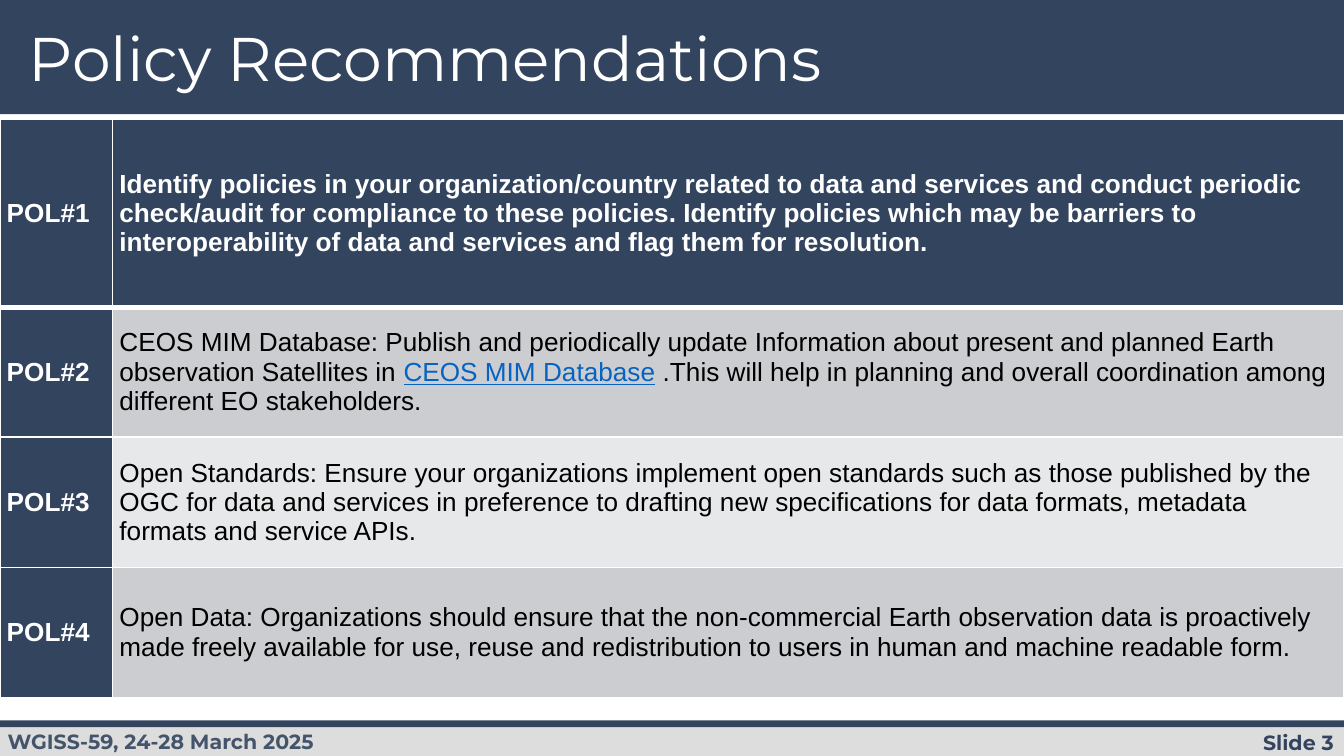
from dataclasses import dataclass
from typing import Any, NamedTuple

from lxml import etree
from pptx import Presentation
from pptx.dml.color import RGBColor
from pptx.enum.shapes import MSO_SHAPE
from pptx.enum.text import MSO_ANCHOR, PP_ALIGN
from pptx.oxml.ns import qn
from pptx.util import Pt

RECTANGLE = MSO_SHAPE.RECTANGLE
TOP, MIDDLE = MSO_ANCHOR.TOP, MSO_ANCHOR.MIDDLE
LEFT, RIGHT = PP_ALIGN.LEFT, PP_ALIGN.RIGHT
TITLE_ONLY = 5


@dataclass(frozen=True)
class Theme:
    navy: str = "33445F"
    slate: str = "44546A"
    footer: str = "DDDDDD"
    band_dark: str = "CCCDD1"
    band_light: str = "E7E8E9"
    white: str = "FFFFFF"
    black: str = "000000"
    link: str = "0563C1"
    heading_font: str = "Montserrat"
    table_font: str = "Arial"
    title_size: float = 33
    table_size: float = 14
    footer_size: float = 11


THEME = Theme()


class Box(NamedTuple):
    left: float
    top: float
    width: float
    height: float

    def in_points(self) -> list[int]:
        return [Pt(length) for length in self]


class Bar(NamedTuple):
    box: Box
    color: str


class FooterText(NamedTuple):
    box: Box
    text: str
    color: str
    align: Any
    margins: tuple[float, float]


class Phrase(NamedTuple):
    text: str
    linked: bool = False


class Policy(NamedTuple):
    label: str
    phrases: list[Phrase]
    height: float
    fill: str
    header: bool = False


BARS = [
    Bar(Box(0, 0, 720, 61.2), THEME.navy),
    Bar(Box(0, 388.2, 720, 16.8), THEME.footer),
    Bar(Box(0, 386, 720, 3.6), THEME.navy),
]
FOOTER_TEXTS = [
    FooterText(Box(606, 388.2, 114, 18.5), "Slide 3", THEME.navy, RIGHT, (5.4, 2.7)),
    FooterText(Box(-3, 383.8, 227.5, 28), "WGISS-59, 24-28 March 2025", THEME.slate, LEFT, (7.2, 7.2)),
]
TITLE_BOX = Box(10, 10, 554.4, 46)
COLUMN_WIDTHS = [60.4, 659.6]
TABLE_TOP = 64
POLICIES = [
    Policy("POL#1", [Phrase(
        "Identify policies in your organization/country related to data and services and conduct "
        "periodic check/audit for compliance to these policies. Identify policies which may be "
        "barriers to interoperability of data and services and flag them for resolution."
    )], 100.6, THEME.navy, header=True),
    Policy("POL#2", [
        Phrase("CEOS MIM Database: Publish and periodically update Information about present and "
               "planned Earth observation Satellites in "),
        Phrase("CEOS MIM Database", linked=True),
        Phrase(" .This will help in planning and overall coordination among different EO stakeholders."),
    ], 69.7, THEME.band_dark),
    Policy("POL#3", [Phrase(
        "Open Standards: Ensure your organizations implement open standards such as those published "
        "by the OGC for data and services in preference to drafting new specifications for data "
        "formats, metadata formats and service APIs."
    )], 69.7, THEME.band_light),
    Policy("POL#4", [Phrase(
        "Open Data: Organizations should ensure that the non-commercial Earth observation data is "
        "proactively made freely available for use, reuse and redistribution to users in human and "
        "machine readable form."
    )], 69.7, THEME.band_dark),
]


def apply_format(target: Any, values: dict[str, Any]) -> None:
    for name, value in values.items():
        setattr(target, name, value)


def margins(horizontal: float, vertical: float) -> dict[str, int]:
    return {
        "margin_left": Pt(horizontal), "margin_right": Pt(horizontal),
        "margin_top": Pt(vertical), "margin_bottom": Pt(vertical),
    }


def add_text(paragraph: Any, text: str, color: str, font: str, size: float,
             bold: bool = False, underline: bool = False) -> None:
    run = paragraph.add_run()
    run.text = text
    apply_format(run.font, {"name": font, "size": Pt(size), "bold": bold, "underline": underline})
    run.font.color.rgb = RGBColor.from_string(color)


def draw_bar(slide: Any, bar: Bar) -> None:
    shape = slide.shapes.add_shape(RECTANGLE, *bar.box.in_points())
    shape.shadow.inherit = False
    shape.fill.solid()
    shape.fill.fore_color.rgb = RGBColor.from_string(bar.color)
    shape.line.fill.background()


def draw_footer_text(slide: Any, footer: FooterText) -> None:
    frame = slide.shapes.add_textbox(*footer.box.in_points()).text_frame
    apply_format(frame, {"word_wrap": True, "vertical_anchor": TOP, **margins(*footer.margins)})
    paragraph = frame.paragraphs[0]
    paragraph.alignment = footer.align
    add_text(paragraph, footer.text, footer.color, THEME.heading_font, THEME.footer_size, bold=True)


def draw_title(slide: Any, text: str) -> None:
    title = slide.shapes.title
    apply_format(title, dict(zip(("left", "top", "width", "height"), TITLE_BOX.in_points())))
    frame = title.text_frame
    apply_format(frame, {"word_wrap": True, "vertical_anchor": MIDDLE, **margins(5.4, 2.7)})
    paragraph = frame.paragraphs[0]
    apply_format(paragraph, {"alignment": LEFT, "line_spacing": 0.9})
    add_text(paragraph, text, THEME.white, THEME.heading_font, THEME.title_size)


def set_borders(cell: Any, bottom: float, top: float) -> None:
    properties = cell._tc.get_or_add_tcPr()
    widths = {"a:lnL": 1, "a:lnR": 1, "a:lnT": top, "a:lnB": bottom}
    for position, (tag, width) in enumerate(widths.items()):
        line = etree.Element(qn(tag), w=str(Pt(width)))
        fill = etree.SubElement(line, qn("a:solidFill"))
        etree.SubElement(fill, qn("a:srgbClr"), val=THEME.white)
        properties.insert(position, line)


def format_cell(cell: Any, fill: str, bottom: float, top: float) -> Any:
    apply_format(cell, {"vertical_anchor": MIDDLE, **margins(3.6, 1.4)})
    cell.fill.solid()
    cell.fill.fore_color.rgb = RGBColor.from_string(fill)
    set_borders(cell, bottom, top)
    return cell.text_frame.paragraphs[0]


def draw_policies(slide: Any, policies: list[Policy]) -> None:
    box = Box(0, TABLE_TOP, sum(COLUMN_WIDTHS), sum(policy.height for policy in policies))
    table = slide.shapes.add_table(len(policies), len(COLUMN_WIDTHS), *box.in_points()).table
    for column, width in zip(table.columns, COLUMN_WIDTHS):
        column.width = Pt(width)
    top = 1
    for row, policy in zip(table.rows, policies):
        row.height = Pt(policy.height)
        bottom = 3 if policy.header else 1
        label_cell, advice_cell = row.cells
        label = format_cell(label_cell, THEME.navy, bottom, top)
        add_text(label, policy.label, THEME.white, THEME.table_font, THEME.table_size, bold=True)
        advice = format_cell(advice_cell, policy.fill, bottom, top)
        plain_color = THEME.white if policy.header else THEME.black
        for phrase in policy.phrases:
            add_text(advice, phrase.text, THEME.link if phrase.linked else plain_color,
                     THEME.table_font, THEME.table_size, policy.header, phrase.linked)
        top = bottom


def main() -> None:
    presentation = Presentation()
    apply_format(presentation, {"slide_width": Pt(720), "slide_height": Pt(405)})
    slide = presentation.slides.add_slide(presentation.slide_layouts[TITLE_ONLY])
    for bar in BARS:
        draw_bar(slide, bar)
    for footer in FOOTER_TEXTS:
        draw_footer_text(slide, footer)
    title_element = slide.shapes.title._element
    title_element.getparent().append(title_element)
    draw_title(slide, "Policy Recommendations")
    draw_policies(slide, POLICIES)
    presentation.save("out.pptx")


if __name__ == "__main__":
    main()
